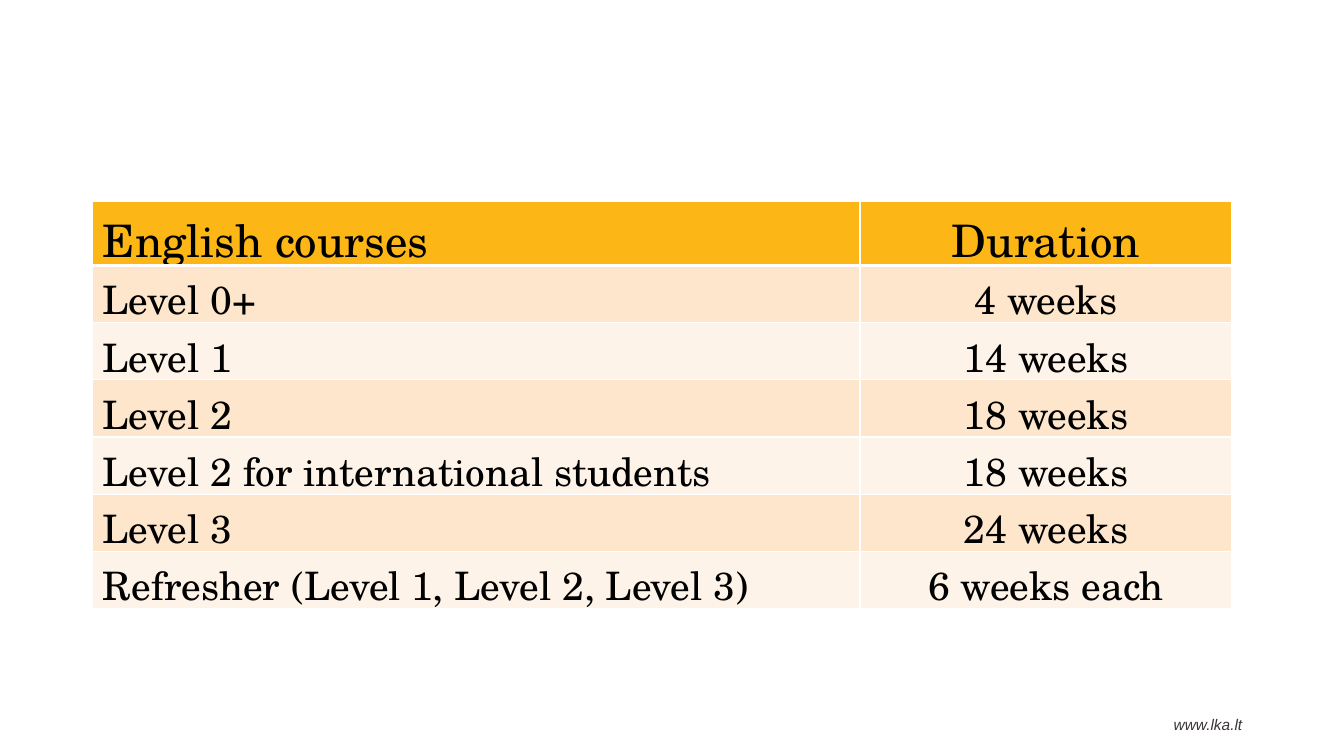
from lxml import etree
from pptx import Presentation
from pptx import util as u
from pptx.dml.color import RGBColor
from pptx.enum import text
from pptx.oxml import ns

COURSES = [
    ("English courses", "Duration"),
    ("Level 0+", "4 weeks"),
    ("Level 1", "14 weeks"),
    ("Level 2", "18 weeks"),
    ("Level 2 for international students", "18 weeks"),
    ("Level 3", "24 weeks"),
    ("Refresher (Level 1, Level 2, Level 3)", "6 weeks each"),
]
HEADER_FILL = "FCB716"
BAND_FILLS = ("FEF3E8", "FEE6CC")


def color(value):
    return RGBColor.from_string(value)


def style(para, size, face, ink, align, italic=False):
    para.alignment = align
    para.font.size = u.Pt(size)
    para.font.name = face
    para.font.italic = italic
    para.font.color.rgb = color(ink)


def add_borders(cell, bottom_width):
    properties = cell._tc.get_or_add_tcPr()
    widths = {"lnL": 1, "lnR": 1, "lnT": 1, "lnB": bottom_width}
    for index, (side, width) in enumerate(widths.items()):
        line = etree.Element(ns.qn("a:" + side), w=str(u.Pt(width)))
        fill = etree.SubElement(line, ns.qn("a:solidFill"))
        etree.SubElement(fill, ns.qn("a:srgbClr"), val="FFFFFF")
        properties.insert(index, line)


def add_course_table(page):
    frame = page.shapes.add_table(
        len(COURSES), 2, u.Inches(0.92), u.Inches(2), u.Inches(11.3), u.Inches(4.03)
    )
    table = frame.table
    table.columns[0].width = u.Inches(7.61)
    table.columns[1].width = u.Inches(3.69)
    for row, values in enumerate(COURSES):
        is_header = row == 0
        table.rows[row].height = u.Inches(0.63 if is_header else 0.56)
        for column, value in enumerate(values):
            cell = table.cell(row, column)
            cell.text = value
            cell.fill.solid()
            cell.fill.fore_color.rgb = color(HEADER_FILL if is_header else BAND_FILLS[row % 2])
            add_borders(cell, 3 if is_header else 1)
            align = text.PP_ALIGN.CENTER if column else text.PP_ALIGN.LEFT
            style(cell.text_frame.paragraphs[0], 32 if is_header else 28,
                  "TeX Gyre Schola", "000000", align)


def add_footer(page):
    box = page.shapes.add_textbox(u.Inches(9.53), u.Inches(7.04), u.Inches(2.89), u.Inches(0.29))
    box.text_frame.word_wrap = True
    para = box.text_frame.paragraphs[0]
    para.text = "www.lka.lt"
    style(para, 11, "Arial", "3B3536", text.PP_ALIGN.RIGHT, italic=True)


def main():
    deck = Presentation()
    deck.slide_width = u.Inches(13.33)
    deck.slide_height = u.Inches(7.5)
    page = deck.slides.add_slide(deck.slide_layouts[6])
    add_footer(page)
    add_course_table(page)
    deck.save("out.pptx")


if __name__ == "__main__":
    main()
